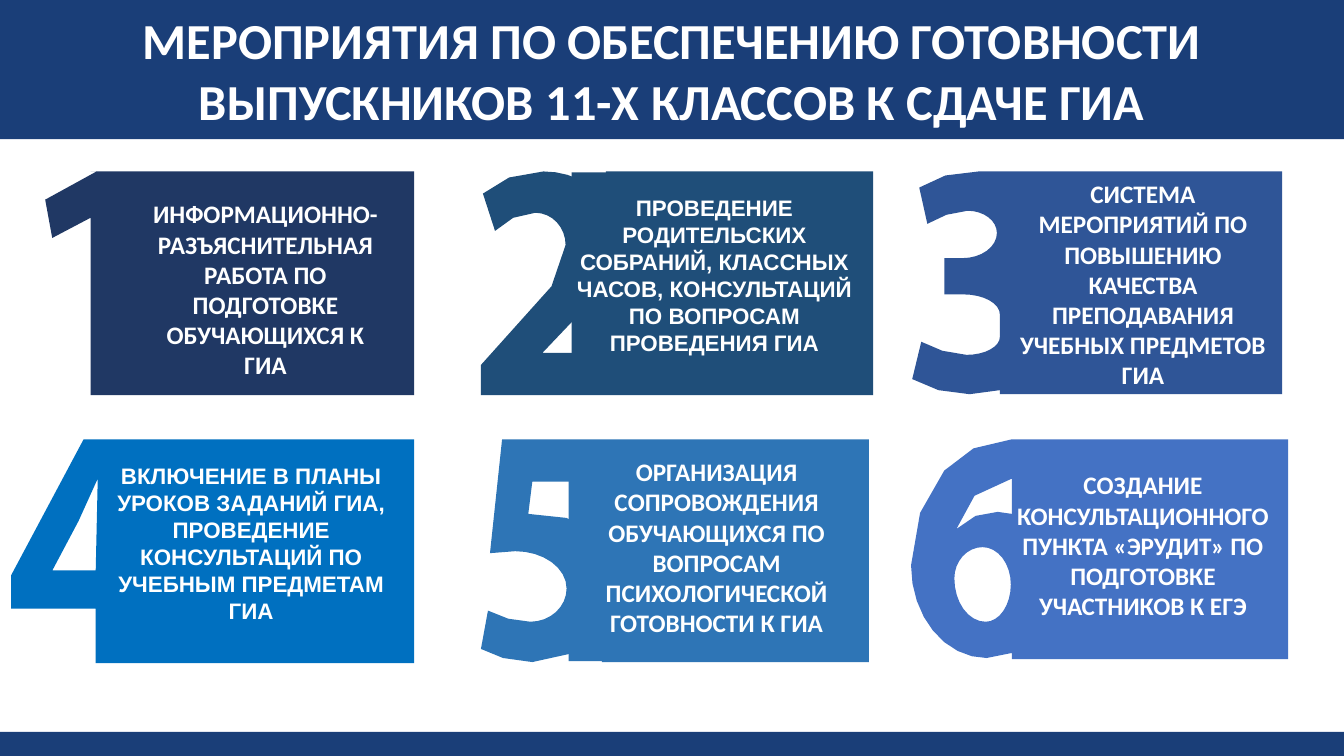
import pptx
import pptx.util
import pptx.dml.color
import pptx.enum.shapes
import pptx.enum.text
from pptx.util import Cm

THEME = {
    "bar": "1A3E78", "text": "FFFFFF",
    "cards": ["203864", "1F4E79", "2F5597", "0070C0", "2E75B6", "4472C4"],
    "title": ("Calibri", 36), "calibri": ("Calibri", 18), "arial": ("Arial", 16),
}
SLIDE_WIDTH, SLIDE_HEIGHT = 33.87, 19.05
HEADER_HEIGHT, FOOTER_TOP, FOOTER_HEIGHT = 3.51, 18.44, 0.62
ROW_TOPS = (4.32, 11.07)
COLUMNS = 3
UNIT = 0.0254  # centimetres in one step of the digit coordinates
PANEL_WIDTH = 295
CURVE_STEPS = 8
H, V = "leaves horizontally", "leaves vertically"  # quarter-ellipse arcs

TITLE = "МЕРОПРИЯТИЯ ПО ОБЕСПЕЧЕНИЮ ГОТОВНОСТИ ВЫПУСКНИКОВ 11-Х КЛАССОВ К СДАЧЕ ГИА"

# "edge" is where the digit meets its card; "digit" runs down its left side.
CARDS = [
    {"text": "ИНФОРМАЦИОННО-РАЗЪЯСНИТЕЛЬНАЯ РАБОТА ПО ПОДГОТОВКЕ ОБУЧАЮЩИХСЯ К ГИА",
     "style": "calibri", "box": (3.4, 4.88, 6.58, 4.88),
     "left": 1.14, "size": (366, 222), "edge": 45,
     "digit": [(51, 0), (0, 28), (7, 66), (45, 46)], "holes": []},
    {"text": "ПРОВЕДЕНИЕ РОДИТЕЛЬСКИХ СОБРАНИЙ, КЛАССНЫХ ЧАСОВ, КОНСУЛЬТАЦИЙ "
             "ПО ВОПРОСАМ ПРОВЕДЕНИЯ ГИА",
     "style": "arial", "box": (14.12, 4.78, 7.77, 5.05),
     "left": 12.12, "size": (389, 222), "edge": 124, "panel_left": 90,
     "digit": [(124, 44), (62, 0, V), (28, 6), (2, 22), (14, 59), (32, 46), (54, 41),
               (84, 73, H), (70, 114), (0, 192), (0, 222)],
     "holes": [[(61, 180), (100, 139), (124, 93), (124, 180)]]},
    {"text": "СИСТЕМА МЕРОПРИЯТИЙ ПО ПОВЫШЕНИЮ КАЧЕСТВА ПРЕПОДАВАНИЯ УЧЕБНЫХ ПРЕДМЕТОВ ГИА",
     "style": "calibri", "box": (25.3, 4.37, 7.01, 5.64),
     "left": 22.99, "size": (367, 221), "edge": 87,
     "digit": [(66, 0), (33, 4), (7, 16), (15, 52), (34, 43), (55, 39), (84, 61, H),
               (50, 86, V), (32, 86), (32, 122), (51, 122), (87, 142, H), (87, 164),
               (54, 182, V), (30, 178), (9, 169), (0, 206), (26, 217), (57, 221),
               (87, 217)],
     "holes": []},
    {"text": "ВКЛЮЧЕНИЕ В ПЛАНЫ УРОКОВ ЗАДАНИЙ ГИА, ПРОВЕДЕНИЕ КОНСУЛЬТАЦИЙ "
             "ПО УЧЕБНЫМ ПРЕДМЕТАМ ГИА",
     "style": "arial", "box": (2.34, 11.53, 7.98, 4.37),
     "left": 0.28, "size": (400, 222), "edge": 126,
     "digit": [(72, 0), (0, 135), (0, 168), (84, 168), (84, 222)],
     "holes": [[(84, 130), (41, 130), (67, 81), (86, 39)]]},
    {"text": "ОРГАНИЗАЦИЯ СОПРОВОЖДЕНИЯ ОБУЧАЮЩИХСЯ ПО ВОПРОСАМ ПСИХОЛОГИЧЕСКОЙ "
             "ГОТОВНОСТИ К ГИА",
     "style": "calibri", "box": (14.4, 11.38, 7.32, 4.88),
     "left": 12.12, "size": (385, 221), "edge": 120, "panel_left": 87,
     "digit": [(21, 0), (9, 113), (34, 111), (85, 148, H), (49, 181, V), (27, 178),
               (7, 170), (0, 208), (22, 217), (51, 221), (92, 212), (120, 183)],
     "holes": [[(120, 104), (107, 89), (85, 78), (47, 74), (51, 42), (120, 42)]]},
    {"text": "СОЗДАНИЕ КОНСУЛЬТАЦИОННОГО ПУНКТА «ЭРУДИТ» ПО ПОДГОТОВКЕ УЧАСТНИКОВ К ЕГЭ",
     "style": "calibri", "box": (25.3, 11.71, 7.01, 4.11),
     "left": 22.96, "size": (374, 218), "edge": 100,
     "digit": [(62, 9), (33, 31), (9, 73), (0, 125), (75, 217, V), (100, 212)],
     "holes": [[(71, 107), (99, 144, H), (74, 181, V), (43, 138, H), (71, 107, V)],
               [(86, 72), (64, 76), (45, 89), (63, 56), (100, 39), (100, 74)]]},
]


def paint(shape, color):
    shape.shadow.inherit = False
    shape.fill.solid()
    shape.fill.fore_color.rgb = pptx.dml.color.RGBColor.from_string(color)
    shape.line.fill.background()


def add_rectangle(shapes, box, color):
    rectangle = shapes.add_shape(
        pptx.enum.shapes.MSO_SHAPE.RECTANGLE, *(Cm(length) for length in box))
    paint(rectangle, color)
    return rectangle


def write_text(shape, text, style):
    frame = shape.text_frame
    frame.word_wrap = True
    paragraph = frame.paragraphs[0]
    paragraph.alignment = pptx.enum.text.PP_ALIGN.CENTER
    run = paragraph.add_run()
    run.text = text
    name, size = THEME[style]
    run.font.name, run.font.size, run.font.bold = name, pptx.util.Pt(size), True
    run.font.color.rgb = pptx.dml.color.RGBColor.from_string(THEME["text"])


def flatten(contour):
    """Turn corners and quarter-ellipse arcs into points in EMU."""
    points = []
    for x, y, *bend in contour:
        if bend:
            x0, y0 = points[-1]
            for step in range(1, CURVE_STEPS):
                angle = math.pi / 2 * step / CURVE_STEPS
                early, late = math.sin(angle), 1 - math.cos(angle)
                along_x, along_y = (early, late) if bend[0] == H else (late, early)
                points.append((x0 + (x - x0) * along_x, y0 + (y - y0) * along_y))
        points.append((x, y))
    return [(Cm(x * UNIT), Cm(y * UNIT)) for x, y in points]


def add_digit_card(shapes, card, top, color):
    width, height = card["size"]
    edge = card["edge"]
    outer = [(width, 0), (edge, 0), *card["digit"], (edge, height), (width, height)]
    start, *rest = flatten(outer)
    builder = shapes.build_freeform(*start)
    builder.add_line_segments(rest, close=True)
    for hole in card["holes"]:
        start, *rest = flatten(hole)
        builder.move_to(*start)
        builder.add_line_segments(rest, close=True)
    paint(builder.convert_to_shape(Cm(card["left"]), Cm(top)), color)


def main():
    presentation = pptx.Presentation()
    presentation.slide_width = Cm(SLIDE_WIDTH)
    presentation.slide_height = Cm(SLIDE_HEIGHT)
    slide = presentation.slides.add_slide(presentation.slide_layouts[6])

    add_rectangle(slide.shapes, (0, FOOTER_TOP, SLIDE_WIDTH, FOOTER_HEIGHT), THEME["bar"])
    header = add_rectangle(slide.shapes, (0, 0, SLIDE_WIDTH, HEADER_HEIGHT), THEME["bar"])
    header.text_frame.vertical_anchor = pptx.enum.text.MSO_ANCHOR.MIDDLE
    write_text(header, TITLE, "title")

    for index, (card, color) in enumerate(zip(CARDS, THEME["cards"])):
        top = ROW_TOPS[index // COLUMNS]
        if "panel_left" in card:
            group = slide.shapes.add_group_shape()
            add_digit_card(group.shapes, card, top, color)
            panel = (card["left"] + card["panel_left"] * UNIT, top + UNIT,
                     PANEL_WIDTH * UNIT, (card["size"][1] - 2) * UNIT)
            add_rectangle(group.shapes, panel, color)
        else:
            add_digit_card(slide.shapes, card, top, color)
        label = slide.shapes.add_textbox(*(Cm(length) for length in card["box"]))
        write_text(label, card["text"], card["style"])

    presentation.save("out.pptx")


import math

if __name__ == "__main__":
    main()
